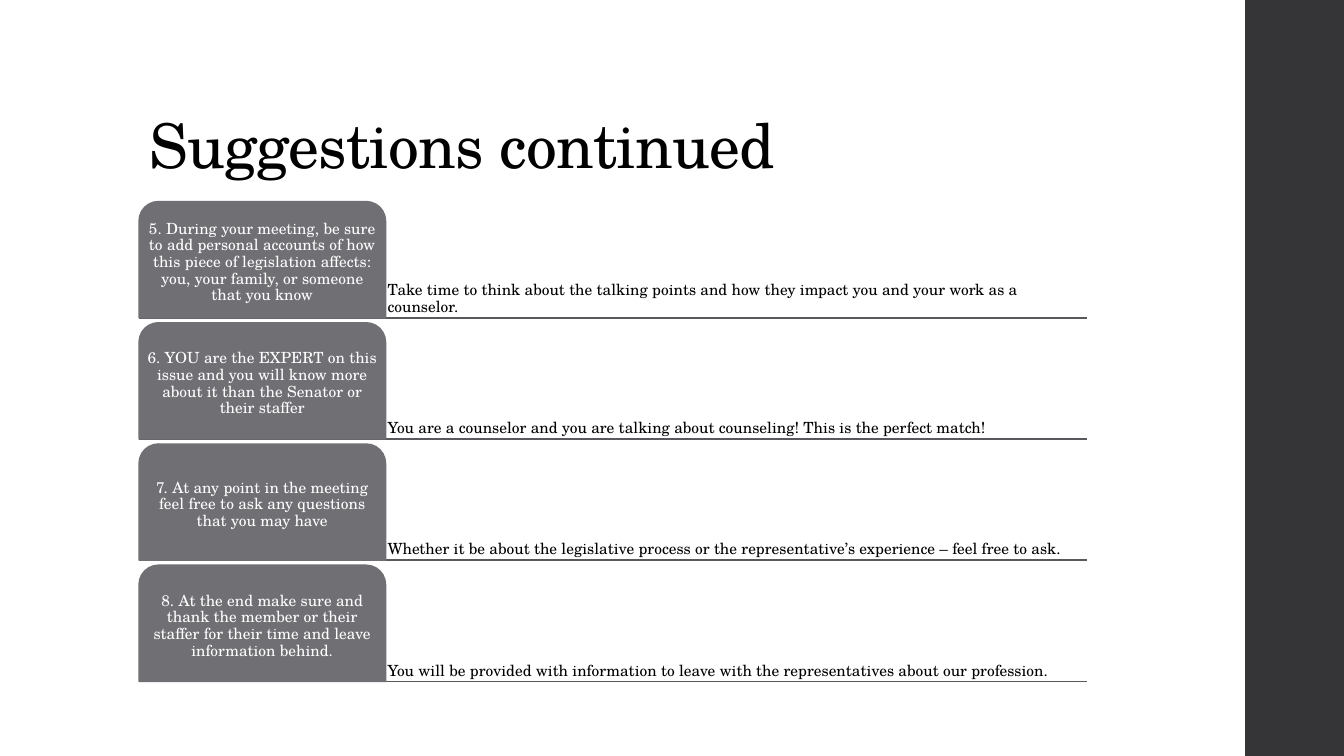
import pptx
import pptx.util
import pptx.dml.color
import pptx.enum.shapes
import pptx.enum.text
from lxml import etree

Inches = pptx.util.Inches
Pt = pptx.util.Pt
RGBColor = pptx.dml.color.RGBColor
SHAPE = pptx.enum.shapes.MSO_SHAPE
ANCHOR = pptx.enum.text.MSO_ANCHOR
ALIGN = pptx.enum.text.PP_ALIGN

FONT = "TeX Gyre Schola"
BLACK = RGBColor(0x00, 0x00, 0x00)
WHITE = RGBColor(0xFF, 0xFF, 0xFF)
DARK = RGBColor(0x35, 0x35, 0x37)
GRAY = RGBColor(0x6F, 0x6F, 0x74)
RULE = RGBColor(0x59, 0x59, 0x5D)

ROWS = [
    ("5. During your meeting, be sure to add personal accounts of how this piece of "
     "legislation affects: you, your family, or someone that you know",
     "Take time to think about the talking points and how they impact you and your "
     "work as a counselor."),
    ("6. YOU are the EXPERT on this issue and you will know more about it than the "
     "Senator or their staffer",
     "You are a counselor and you are talking about counseling! This is the perfect match!"),
    ("7. At any point in the meeting feel free to ask any questions that you may have",
     "Whether it be about the legislative process or the representative’s experience "
     "– feel free to ask."),
    ("8. At the end make sure and thank the member or their staffer for their time and "
     "leave information behind.",
     "You will be provided with information to leave with the representatives about "
     "our profession."),
]


def write(shape, text, size=11, color=BLACK, align=ALIGN.LEFT,
          anchor=ANCHOR.BOTTOM, inset=0.02, track=None):
    frame = shape.text_frame
    frame.word_wrap = True
    frame.auto_size = pptx.enum.text.MSO_AUTO_SIZE.NONE
    frame.vertical_anchor = anchor
    frame.margin_left = frame.margin_right = Inches(inset)
    frame.margin_top = frame.margin_bottom = Inches(min(inset, 0.05))
    para = frame.paragraphs[0]
    para.alignment = align
    para.line_spacing = 0.9
    run = para.add_run()
    run.text = text
    run.font.name = FONT
    run.font.size = Pt(size)
    run.font.color.rgb = color
    if track is not None:
        run._r.get_or_add_rPr().set("spc", str(int(track * 100)))


def paint(shape, fill):
    shape.shadow.inherit = False
    shape.fill.solid()
    shape.fill.fore_color.rgb = fill


def add_band(slide, left, top, width, height):
    band = slide.shapes.add_shape(SHAPE.RECTANGLE, Inches(left), Inches(top),
                                  Inches(width), Inches(height))
    paint(band, DARK)
    band.line.fill.background()


def add_title(slide, left, top, width, height):
    title = slide.shapes.title
    title.left, title.top = Inches(left), Inches(top)
    title.width, title.height = Inches(width), Inches(height)
    write(title, "Suggestions continued", size=44, inset=0.1, track=-0.5)


def add_rule(slide, left, top, width):
    rule = slide.shapes.add_connector(
        pptx.enum.shapes.MSO_CONNECTOR.STRAIGHT,
        Inches(left), Inches(top), Inches(left + width), Inches(top))
    rule.line.color.rgb = RULE
    rule.line.width = Pt(1.1)
    etree.SubElement(rule._element.spPr, pptx.oxml.ns.qn("a:effectLst"))


def add_row(slide, left, top, width, height, label, note):
    side = width * 0.26
    add_rule(slide, left, top + height, width)
    body = slide.shapes.add_textbox(Inches(left + side), Inches(top),
                                    Inches(width - side), Inches(height))
    write(body, note)
    tab = slide.shapes.add_shape(SHAPE.ROUND_2_SAME_RECTANGLE, Inches(left),
                                 Inches(top), Inches(side), Inches(height))
    tab.adjustments[0] = 0.167
    tab.adjustments[1] = 0
    paint(tab, GRAY)
    tab.line.color.rgb = GRAY
    tab.line.width = Pt(1.1)
    write(tab, label, color=WHITE, align=ALIGN.CENTER, anchor=ANCHOR.MIDDLE)


def add_list(slide, left, top, width, height):
    gap = 0.05
    step = (height + gap) / len(ROWS)
    for i, (label, note) in enumerate(ROWS):
        add_row(slide, left, top + i * step, width, step - gap, label, note)


def main():
    deck = pptx.Presentation()
    deck.slide_width, deck.slide_height = Inches(13.33), Inches(7.5)
    slide = deck.slides.add_slide(deck.slide_layouts[5])
    add_band(slide, 12.35, 0, 0.98, 7.5)
    add_title(slide, 1.38, 0.4, 10.6, 1.45)
    add_list(slide, 1.38, 2, 9.4, 4.76)
    deck.save("out.pptx")


if __name__ == "__main__":
    main()
